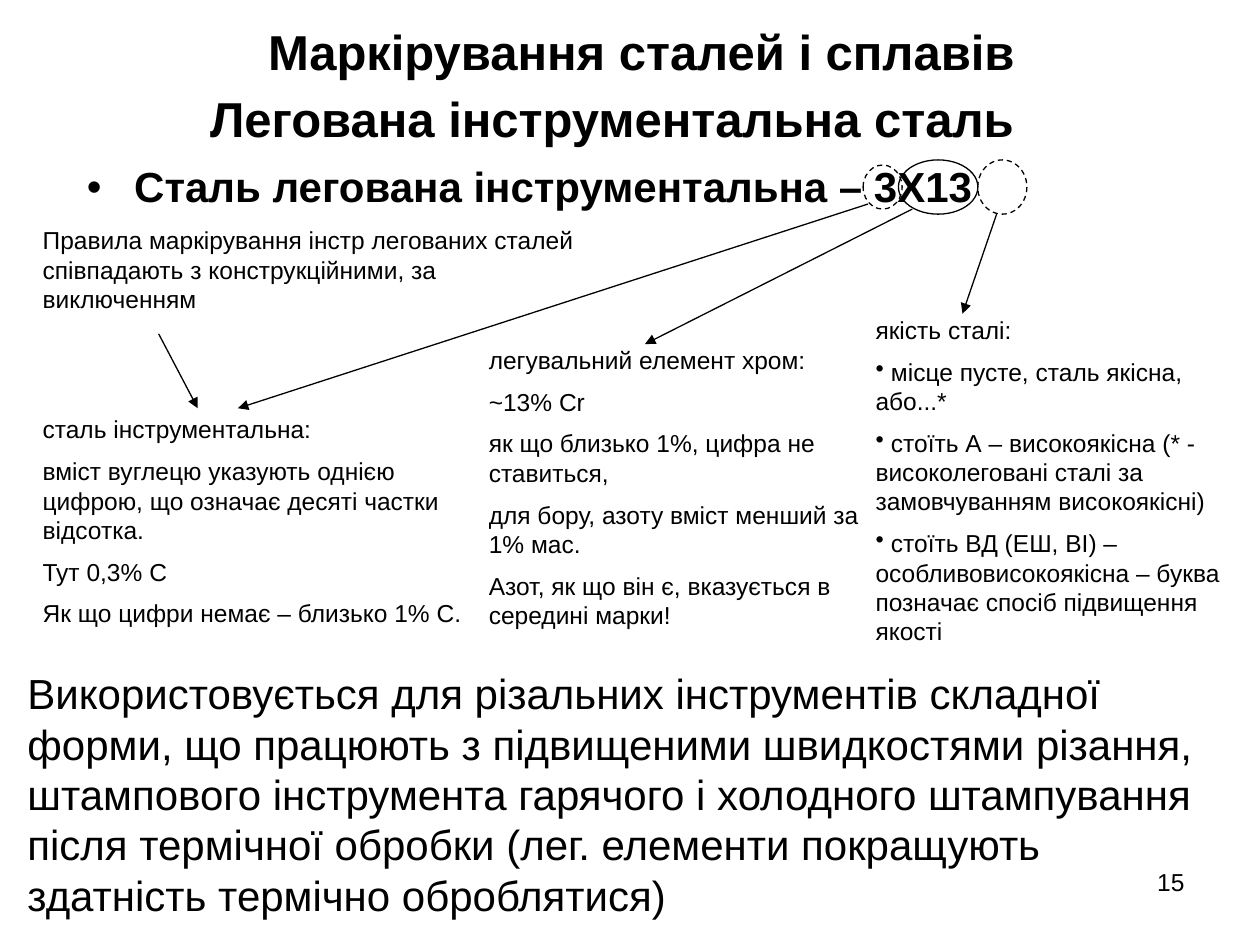
import pptx
import pptx.dml.color
import pptx.enum.dml
import pptx.enum.shapes
import pptx.enum.text
import pptx.oxml.ns
import pptx.util
from dataclasses import dataclass
from lxml import etree

Pt = pptx.util.Pt
ALIGN = pptx.enum.text.PP_ALIGN
ANCHOR = pptx.enum.text.MSO_ANCHOR
qn = pptx.oxml.ns.qn


@dataclass(frozen=True)
class Theme:
    font: str = "Arial"
    ink: pptx.dml.color.RGBColor = pptx.dml.color.RGBColor(0, 0, 0)
    heading: int = 28
    lead: int = 24
    note: int = 14
    line: float = 0.75


theme = Theme()


def write(shape, *lines, size=theme.note, bold=False, align=ALIGN.LEFT,
          anchor=ANCHOR.TOP, spacing=None, bullets_from=None):
    """Fill a shape with one paragraph per line, bulleted from the given index."""
    frame = shape.text_frame
    frame.word_wrap = True
    frame.auto_size = pptx.enum.text.MSO_AUTO_SIZE.NONE
    frame.vertical_anchor = anchor
    for index, line in enumerate(lines):
        paragraph = frame.paragraphs[0] if index == 0 else frame.add_paragraph()
        paragraph.alignment = align
        paragraph.line_spacing = spacing
        if index:
            paragraph.space_before = Pt(size / 2)
        if bullets_from is not None and index >= bullets_from:
            bullet = etree.SubElement(paragraph._p.get_or_add_pPr(), qn("a:buChar"))
            bullet.set("char", "•")
        run = paragraph.add_run()
        run.text = line
        run.font.name = theme.font
        run.font.size = Pt(size)
        run.font.bold = bold
        run.font.color.rgb = theme.ink


presentation = pptx.Presentation()
presentation.slide_width, presentation.slide_height = Pt(720), Pt(540)
slide = presentation.slides.add_slide(presentation.slide_layouts[1])
shapes = slide.shapes

# Headings and the steel grade
title, grade = slide.placeholders
for placeholder, box in ((title, (42.5, 15, 648, 28)), (grade, (42.5, 91.5, 576, 33))):
    placeholder.left, placeholder.top, placeholder.width, placeholder.height = map(Pt, box)
write(title, "Маркірування сталей і сплавів", size=theme.heading, bold=True,
      align=ALIGN.CENTER, anchor=ANCHOR.MIDDLE)
write(grade, "Сталь легована інструментальна – 3Х13", size=theme.lead, bold=True,
      spacing=0.9)
subtitle = shapes.add_textbox(Pt(113), Pt(51), Pt(493), Pt(33))
write(subtitle, "Легована інструментальна сталь", size=theme.heading, bold=True,
      spacing=0.9)

# Explanations of each part of the grade, its use and the page number
explanations = [
    ((17.3, 125.3, 323.3, 57.6),
     ["Правила маркірування інстр легованих сталей співпадають з "
      "конструкційними, за виключенням"], {}),
    ((17.3, 233.3, 255, 133),
     ["сталь інструментальна:",
      "вміст вуглецю указують однією цифрою, що означає десяті частки відсотка.",
      "Тут 0,3% С",
      "Як що цифри немає – близько 1% С."], {}),
    ((272.2, 193.7, 226.8, 175),
     ["легувальний елемент хром:",
      "~13% Сr",
      "як що близько 1%, цифра не ставиться,",
      "для бору, азоту вміст менший за 1% мас.",
      "Азот, як що він є, вказується в середині марки!"], {}),
    ((493.2, 176.4, 215.3, 200),
     ["якість сталі:",
      " місце пусте, сталь якісна, або...*",
      " стоїть А – високоякісна (* - високолеговані сталі за замовчуванням "
      "високоякісні)",
      " стоїть ВД (ЕШ, ВІ) – особливовисокоякісна – буква позначає спосіб "
      "підвищення якості"], {"bullets_from": 1}),
    ((8.6, 378, 697.7, 151),
     ["Використовується для різальних інструментів складної форми, що працюють "
      "з підвищеними швидкостями різання, штампового інструмента гарячого і "
      "холодного штампування після термічної обробки (лег. елементи покращують "
      "здатність термічно оброблятися)"], {"size": theme.lead}),
    ((516.2, 491.8, 167.8, 37.4), ["15"], {"align": ALIGN.RIGHT}),
]
for box, lines, text_format in explanations:
    write(shapes.add_textbox(*map(Pt, box)), *lines, **text_format)

# Rings around the parts of the grade
rings = [
    ((493.2, 94.3, 22.3, 25.2), True),
    ((513.4, 91.4, 45.4, 31), False),
    ((558.7, 91.4, 28.1, 31), True),
]
for box, dashed in rings:
    ring = shapes.add_shape(pptx.enum.shapes.MSO_SHAPE.OVAL, *map(Pt, box))
    ring.shadow.inherit = False
    ring.fill.background()
    ring.line.color.rgb = theme.ink
    ring.line.width = Pt(theme.line)
    if dashed:
        ring.line.dash_style = pptx.enum.dml.MSO_LINE.DASH

# Arrows from the parts to their explanations
arrows = [
    (496, 116.6, 136, 233.3),
    (521.3, 119.5, 368.6, 196.6),
    (569.5, 122.4, 550, 179.3),
    (90.7, 190.8, 113, 233.3),
]
for ends in arrows:
    arrow = shapes.add_connector(pptx.enum.shapes.MSO_CONNECTOR.STRAIGHT, *map(Pt, ends))
    arrow.line.color.rgb = theme.ink
    arrow.line.width = Pt(theme.line)
    etree.SubElement(arrow.line._get_or_add_ln(), qn("a:tailEnd")).set("type", "triangle")
    etree.SubElement(arrow._element.spPr, qn("a:effectLst"))

presentation.save("out.pptx")
